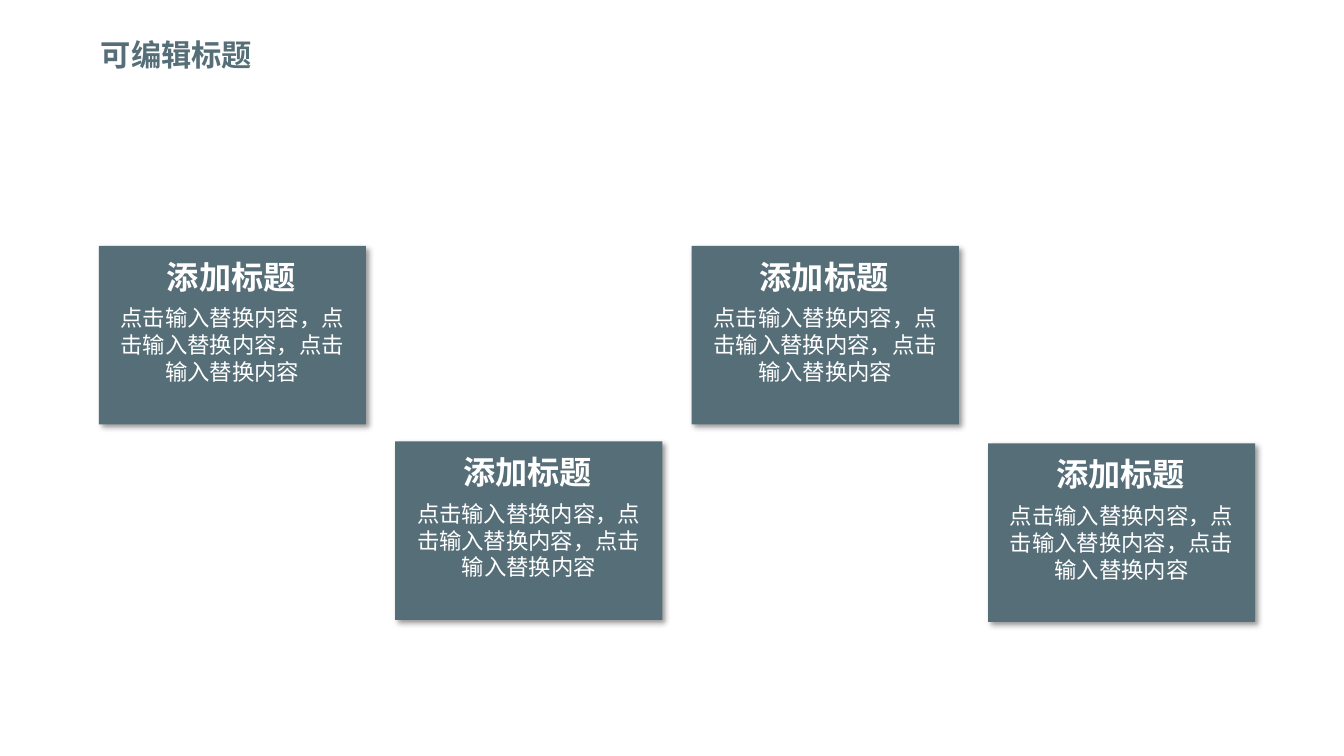
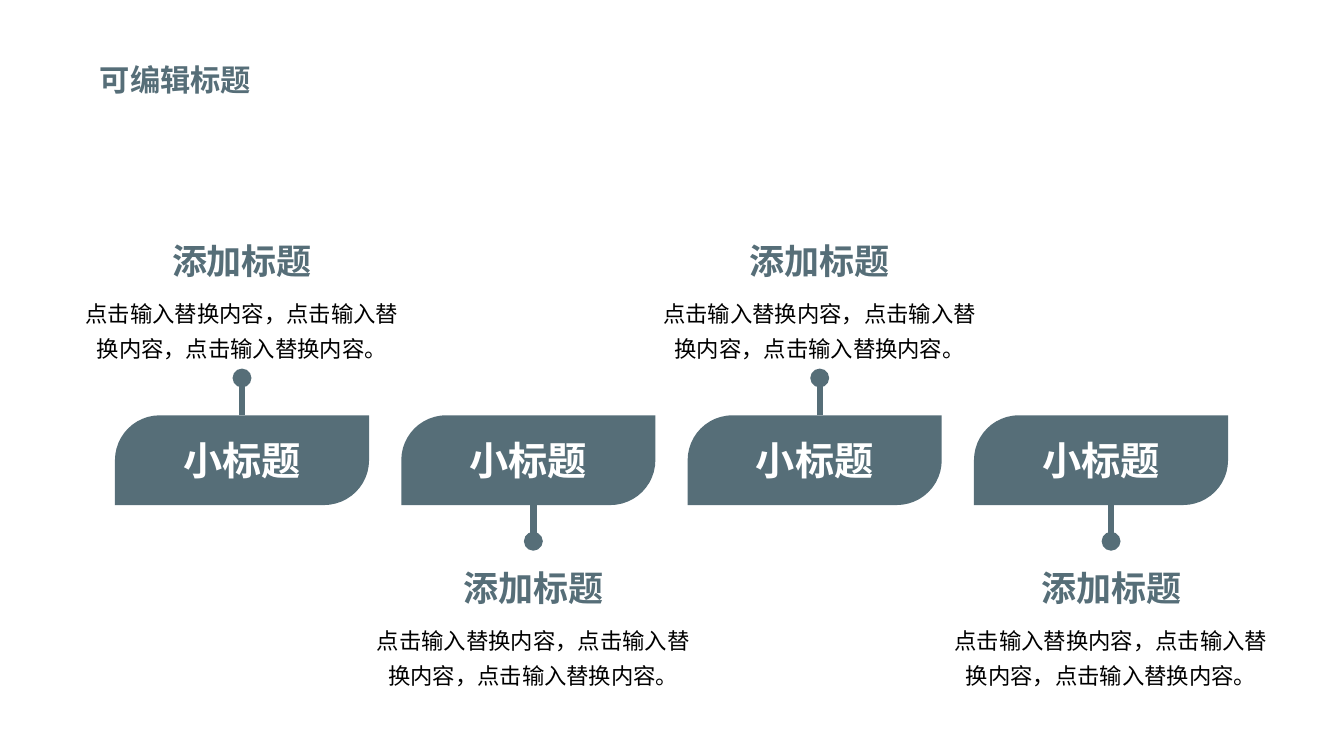
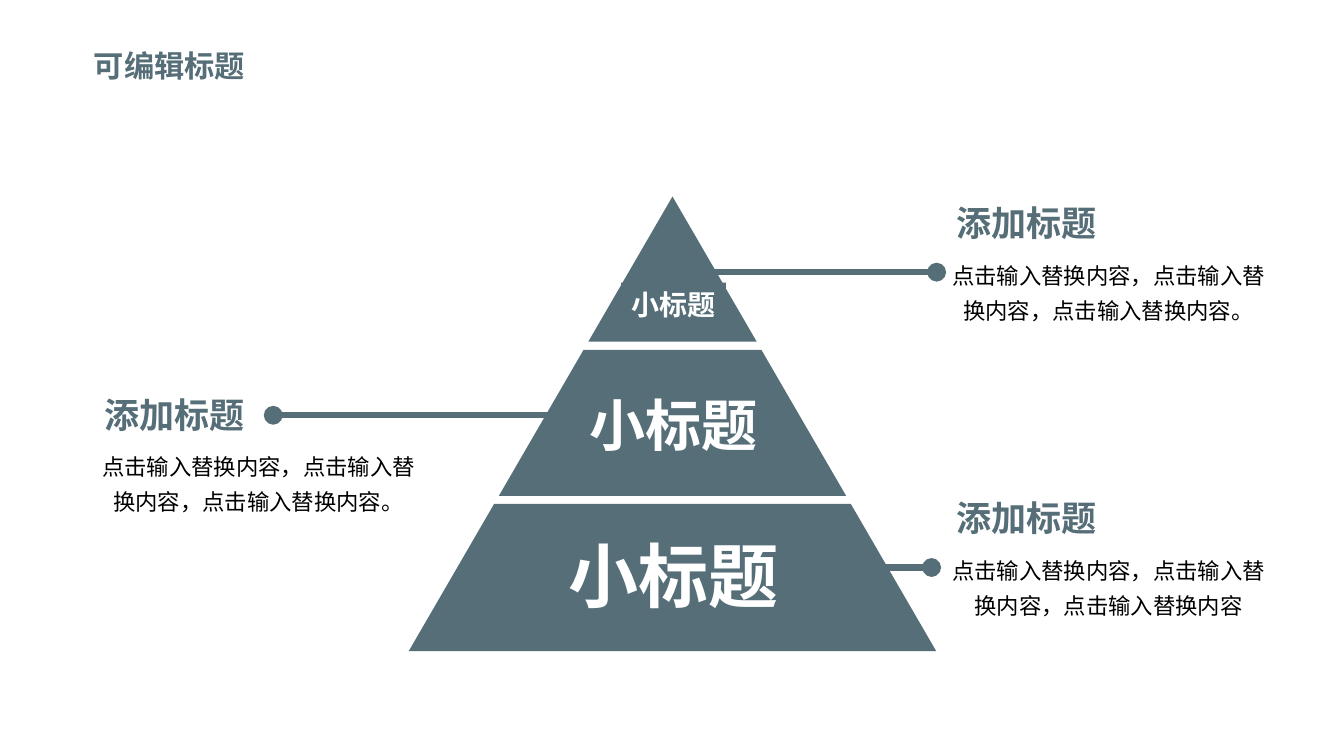
from lxml.etree import SubElement
from pptx import Presentation
from pptx.dml.color import RGBColor
from pptx.enum.shapes import MSO_CONNECTOR, MSO_SHAPE
from pptx.enum.text import MSO_ANCHOR, MSO_AUTO_SIZE, PP_ALIGN
from pptx.oxml import parse_xml
from pptx.oxml.ns import nsdecls, qn
from pptx.util import Inches, Pt

SLATE, WHITE, BLACK = "566E78", "FFFFFF", "000000"
CJK_FONT, BADGE_FONT = "Noto Sans CJK SC", "Arial"
LINE_HEIGHT = 1.2

TITLE = {"size": 21.6, "bold": True, "color": SLATE, "align": PP_ALIGN.RIGHT}
HEADING = {"size": 25, "bold": True, "color": SLATE, "wrap": False}
BODY = {"size": 16, "color": BLACK, "spacing": 1.3}
CARD_HEADING = {"size": 23, "bold": True, "color": WHITE, "wrap": False, "fill": SLATE}
CARD_BODY = {"size": 16, "color": WHITE, "fill": SLATE}
BADGE = {"bold": True, "color": WHITE, "wrap": False, "fill": SLATE, "font": BADGE_FONT}

PHRASE = "点击输入替换内容"
BODY_TEXT = "，".join([PHRASE] * 3)
HEADING_TEXT = "添加标题"
BADGE_TEXT = "小标题"

BODY_WIDTH, BODY_HEIGHT = 3.51, 0.8
HEADING_WIDTH, HEADING_HEIGHT = 1.6, 0.52


def rgb(color):
    return RGBColor.from_string(color)


def box(left, top, width, height):
    return [Inches(value) for value in (left, top, width, height)]


def paint(shape, color):
    shape.fill.solid()
    shape.fill.fore_color.rgb = rgb(color)
    shape.line.fill.background()
    shape.shadow.inherit = False


def write(shape, text, size, color, bold=False, font=CJK_FONT,
          align=PP_ALIGN.CENTER, wrap=True, spacing=1):
    frame = shape.text_frame
    frame.text = text
    frame_format = {"word_wrap": wrap, "auto_size": MSO_AUTO_SIZE.SHAPE_TO_FIT_TEXT,
                    "vertical_anchor": MSO_ANCHOR.TOP}
    paragraph = frame.paragraphs[0]
    paragraph_format = {"alignment": align, "space_before": Pt(0),
                        "line_spacing": Pt(round(size * LINE_HEIGHT * spacing, 1))}
    run = paragraph.runs[0]
    run_format = {"size": Pt(size), "bold": bold, "name": font}
    for target, values in ((frame, frame_format), (paragraph, paragraph_format),
                           (run.font, run_format)):
        for name, value in values.items():
            setattr(target, name, value)
    run.font.color.rgb = rgb(color)
    SubElement(run.font._element, qn("a:ea"), typeface=font)


def add_text(slide, place, text, fill=None, **style):
    shape = slide.shapes.add_textbox(*box(*place))
    if fill:
        paint(shape, fill)
    write(shape, text, **style)


def add_titled_slide(presentation, left, top):
    slide = presentation.slides.add_slide(presentation.slide_layouts[5])
    title = slide.shapes.title
    title.left, title.top, title.width, title.height = box(left, top, 2.61, 0.46)
    write(title, "可编辑标题", **TITLE)
    return slide


def add_pin(slide, start, end):
    """Draw a thick line with a round head at its end."""
    pin = slide.shapes.add_connector(
        MSO_CONNECTOR.STRAIGHT, *[Inches(value) for value in (*start, *end)])
    pin.line.color.rgb = rgb(SLATE)
    pin.line.width = Pt(4.5)
    SubElement(pin.line._get_or_add_ln(), qn("a:tailEnd"), type="oval")
    SubElement(pin._element.spPr, qn("a:effectLst"))


def add_shadow(shape):
    properties = shape._element.spPr
    properties.remove(properties.find(qn("a:effectLst")))
    properties.append(parse_xml(
        f'<a:effectLst {nsdecls("a")}><a:outerShdw blurRad="{Pt(4)}" dist="{Pt(3)}" '
        'dir="2700000" algn="tl" rotWithShape="0"><a:srgbClr val="000000">'
        '<a:alpha val="40000"/></a:srgbClr></a:outerShdw></a:effectLst>'))


def add_card(slide, left, top):
    width, height = 2.65, 1.77
    card = slide.shapes.add_shape(MSO_SHAPE.RECTANGLE, *box(left, top, width, height))
    paint(card, SLATE)
    add_shadow(card)
    add_text(slide, (left + 0.57, top + 0.06, 1.49, 0.49), HEADING_TEXT, **CARD_HEADING)
    add_text(slide, (left + 0.11, top + 0.53, 2.43, 0.91), BODY_TEXT, **CARD_BODY)


def add_callout(slide, heading_left, body_left, top, text=BODY_TEXT + "。"):
    add_text(slide, (body_left, top + HEADING_HEIGHT, BODY_WIDTH, BODY_HEIGHT), text, **BODY)
    add_text(slide, (heading_left, top, HEADING_WIDTH, HEADING_HEIGHT), HEADING_TEXT, **HEADING)


def add_badge_text(slide, center, middle, size):
    width, height = size * 0.042 + 0.2, size * LINE_HEIGHT / 72 + 0.1
    add_text(slide, (center - width / 2, middle - height / 2, width, height),
             BADGE_TEXT, size=size, **BADGE)


def build_cards(presentation):
    slide = add_titled_slide(presentation, -0.01, 0.31)
    for column, top in enumerate((2.44, 4.38, 2.44, 4.4)):
        add_card(slide, 0.98 + column * 2.94, top)


def build_timeline(presentation):
    slide = add_titled_slide(presentation, -0.02, 0.56)
    width, height, top = 2.52, 0.89, 4.12
    for column, center in enumerate((2.4, 5.29, 8.13, 11.02)):
        left = 1.14 + column * 2.84
        badge = slide.shapes.add_shape(
            MSO_SHAPE.ROUND_2_DIAG_RECTANGLE, *box(left, top, width, height))
        badge.adjustments[0], badge.adjustments[1] = 0.5, 0
        paint(badge, SLATE)
        add_badge_text(slide, left + width / 2, top + height / 2, 28)

        above = column % 2 == 0
        start, end, callout_top = (top, 3.75, 2.33) if above else (5, 5.37, 5.57)
        add_pin(slide, (center, start), (center, end))
        add_callout(slide, center - HEADING_WIDTH / 2, center - BODY_WIDTH / 2, callout_top)


def add_pyramid_level(slide, top, bottom):
    center, apex, slope = 6.67, 1.95, 0.58
    corners = [(Inches(center + side * slope * (y - apex)), Inches(y))
               for side, y in ((-1, top), (1, top), (1, bottom), (-1, bottom))]
    builder = slide.shapes.build_freeform(*corners[0], scale=1.0)
    builder.add_line_segments(corners[1:], close=True)
    paint(builder.convert_to_shape(), SLATE)


def build_pyramid(presentation):
    slide = add_titled_slide(presentation, -0.08, 0.42)
    for start, end, y in ((5.44, 2.71, 4.12), (8.73, 9.24, 5.63), (7.08, 9.29, 2.7)):
        add_pin(slide, (start, y), (end, y))
    add_callout(slide, 0.93, 0.81, 3.85)
    add_callout(slide, 9.38, 9.24, 1.95)
    add_callout(slide, 9.38, 9.24, 4.88, BODY_TEXT)
    for top, bottom, middle, size in ((5, 6.46, 5.7, 50), (3.47, 4.92, 4.21, 40),
                                      (1.95, 3.39, 3.02, 20)):
        add_pyramid_level(slide, top, bottom)
        add_badge_text(slide, 6.68, middle, size)


def main():
    presentation = Presentation()
    presentation.slide_width, presentation.slide_height = Inches(13.33), Inches(7.5)
    for build in (build_cards, build_timeline, build_pyramid):
        build(presentation)
    presentation.save("out.pptx")


if __name__ == "__main__":
    main()
